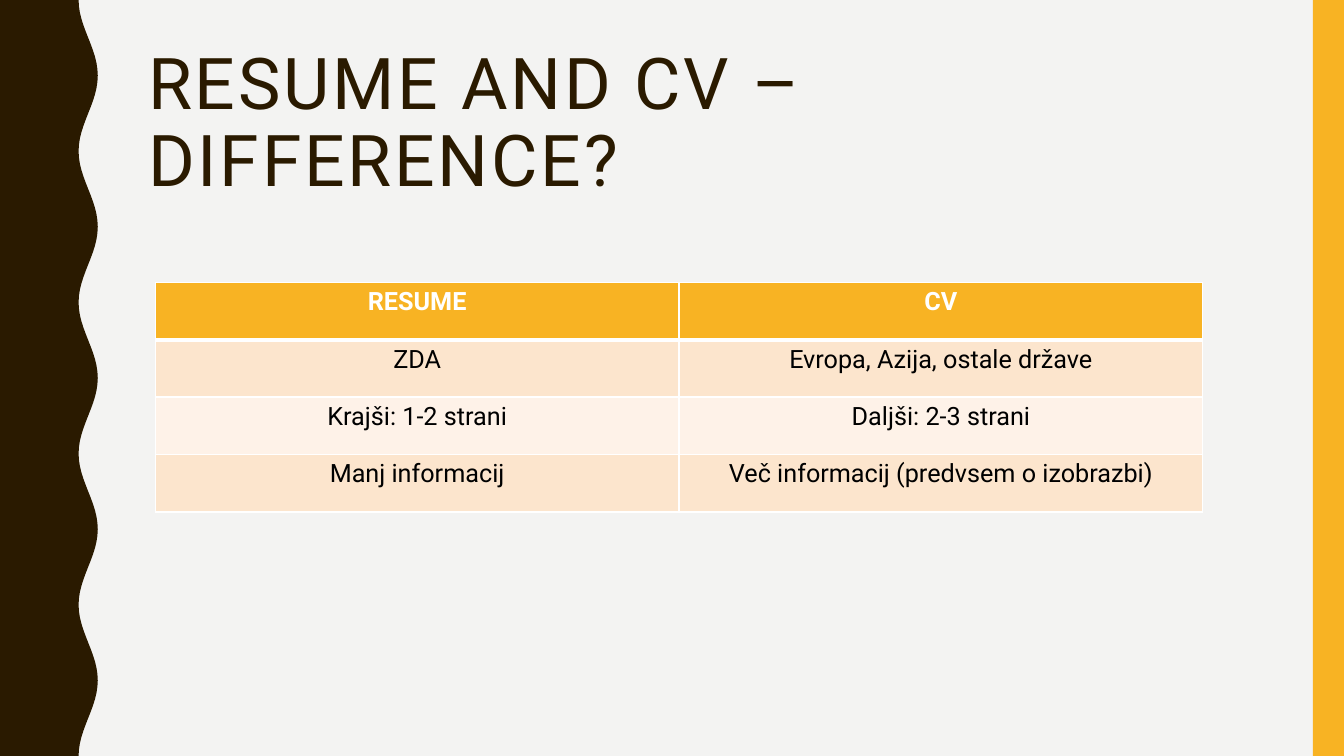
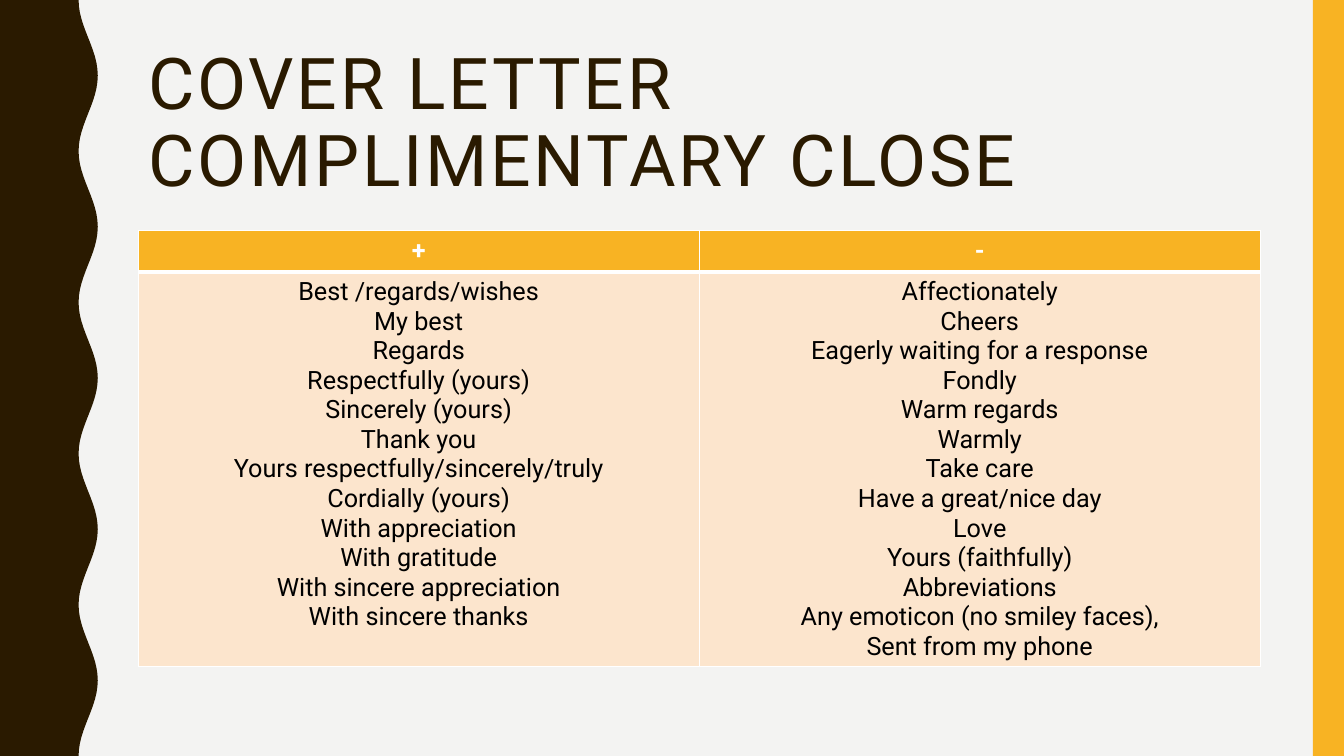
import math
from dataclasses import dataclass

from lxml import etree
from pptx import Presentation
from pptx.dml.color import RGBColor
from pptx.enum import shapes, text
from pptx.oxml import ns
from pptx.util import Inches, Pt


@dataclass(frozen=True)
class Theme:
    paper: str = "F3F3F2"
    brown: str = "2A1A00"
    amber: str = "F8B323"
    white: str = "FFFFFF"
    black: str = "000000"
    bands: tuple = ("FCE5CD", "FEF2E8")
    font: str = "Roboto"
    title_size: float = 51
    table_size: float = 18
    thin: float = 1
    thick: float = 3


THEME = Theme()
WIDTH, HEIGHT = 13.33, 7.5
TITLE_BOX = (1.37, 0.42, 11.13, 1.63)
TITLE_ONLY = 5


def place(shape, box):
    shape.left, shape.top, shape.width, shape.height = map(Inches, box)


def write(frame, lines, *, size, color, bold=False, align=text.PP_ALIGN.LEFT,
          line_spacing=None, letter_spacing=0):
    frame.text = "\n".join(lines)
    for paragraph in frame.paragraphs:
        paragraph.alignment = align
        if line_spacing:
            paragraph.line_spacing = line_spacing
        for run in paragraph.runs:
            run.font.name = THEME.font
            run.font.size = Pt(size)
            run.font.bold = bold
            run.font.color.rgb = RGBColor.from_string(color)
            if letter_spacing:
                run.font._element.set("spc", str(letter_spacing * 100))


def paint(shape, color):
    shape.shadow.inherit = False
    shape.fill.solid()
    shape.fill.fore_color.rgb = RGBColor.from_string(color)
    shape.line.fill.background()


def add_wavy_edge(slide, box, period=1.5, depth=0.19, steps=120):
    left, top, width, height = box
    middle = left + width - depth / 2
    curve = []
    for step in range(steps + 1):
        drop = height * step / steps
        x = middle - depth / 2 * math.cos(2 * math.pi * drop / period)
        curve.append((Inches(x), Inches(top + drop)))
    outline = slide.shapes.build_freeform(Inches(left), Inches(top))
    outline.add_line_segments(curve + [(Inches(left), Inches(top + height))])
    edge = outline.convert_to_shape()
    paint(edge, THEME.brown)
    return edge


def add_side_band(slide, box):
    band = slide.shapes.add_shape(shapes.MSO_SHAPE.RECTANGLE, *map(Inches, box))
    paint(band, THEME.amber)
    return band


def style_layout(layout, slide):
    layout.background.fill.solid()
    layout.background.fill.fore_color.rgb = RGBColor.from_string(THEME.paper)
    place(layout.placeholders[0], TITLE_BOX)
    decorations = (
        add_wavy_edge(slide, (0, 0, 0.97, HEIGHT)),
        add_side_band(slide, (WIDTH - 0.31, 0, 0.31, HEIGHT)),
    )
    for order, decoration in enumerate(decorations):
        decoration.element.nvSpPr.cNvPr.set("id", str(100 + order))
        layout.shapes.element.insert(2 + order, decoration.element)


def add_title(slide, heading, box):
    title = slide.shapes.title
    place(title, box)
    frame = title.text_frame
    frame.word_wrap = True
    frame.auto_size = text.MSO_AUTO_SIZE.NONE
    frame.vertical_anchor = text.MSO_ANCHOR.MIDDLE
    write(frame, [heading], size=THEME.title_size, color=THEME.brown,
          line_spacing=0.9, letter_spacing=2)


def set_borders(cell, **widths):
    properties = cell._tc.get_or_add_tcPr()
    for side in "LRTB":
        line = etree.SubElement(properties, ns.qn(f"a:ln{side}"),
                                w=str(Pt(widths.get(side, THEME.thin))))
        fill = etree.SubElement(line, ns.qn("a:solidFill"))
        etree.SubElement(fill, ns.qn("a:srgbClr"), val=THEME.white)


def add_comparison(slide, rows, box, row_heights):
    left, top, width, _ = box
    columns = len(rows[0])
    frame = slide.shapes.add_table(
        len(rows), columns, *map(Inches, (left, top, width, sum(row_heights))))
    table = frame.table
    for column in table.columns:
        column.width = Inches(width / columns)
    for index, (entries, height) in enumerate(zip(rows, row_heights)):
        table.rows[index].height = Inches(height)
        header = index == 0
        for column, lines in enumerate(entries):
            cell = table.cell(index, column)
            set_borders(cell, **({"B": THEME.thick} if header else
                                 {"T": THEME.thick} if index == 1 else {}))
            shade = THEME.amber if header else THEME.bands[(index - 1) % 2]
            cell.fill.solid()
            cell.fill.fore_color.rgb = RGBColor.from_string(shade)
            write(cell.text_frame, lines, size=THEME.table_size, bold=header,
                  color=THEME.white if header else THEME.black,
                  align=text.PP_ALIGN.CENTER)


def add_comparison_slide(slide, heading, rows, box, row_heights):
    add_title(slide, heading, TITLE_BOX)
    add_comparison(slide, rows, box, row_heights)


DIFFERENCES = [
    (["RESUME"], ["CV"]),
    (["ZDA"], ["Evropa, Azija, ostale države"]),
    (["Krajši: 1-2 strani"], ["Daljši: 2-3 strani"]),
    (["Manj informacij"], ["Več informacij (predvsem o izobrazbi)"]),
]

GOOD_CLOSES = [
    "Best /regards/wishes",
    "My best",
    "Regards",
    "Respectfully (yours)",
    "Sincerely (yours)",
    "Thank you",
    "Yours respectfully/sincerely/truly",
    "Cordially (yours)",
    "With appreciation",
    "With gratitude",
    "With sincere appreciation",
    "With sincere thanks",
]

BAD_CLOSES = [
    "Affectionately",
    "Cheers",
    "Eagerly waiting for a response",
    "Fondly",
    "Warm regards",
    "Warmly",
    "Take care",
    "Have a great/nice day",
    "Love",
    "Yours (faithfully)",
    "Abbreviations",
    "Any emoticon (no smiley faces),",
    "Sent from my phone",
]


def main():
    deck = Presentation()
    deck.slide_width, deck.slide_height = Inches(WIDTH), Inches(HEIGHT)
    layout = deck.slide_layouts[TITLE_ONLY]
    difference = deck.slides.add_slide(layout)
    style_layout(layout, difference)
    add_comparison_slide(difference, "RESUME AND CV – DIFFERENCE?", DIFFERENCES,
                         (1.54, 2.8, 10.39, 2.29), [0.57] * 4)
    closing = deck.slides.add_slide(layout)
    add_comparison_slide(closing, "COVER LETTER\vCOMPLIMENTARY CLOSE",
                         [(["+"], ["-"]), (GOOD_CLOSES, BAD_CLOSES)],
                         (1.37, 2.29, 11.13, 4.32), [0.41, 3.91])
    deck.save("out.pptx")


if __name__ == "__main__":
    main()
